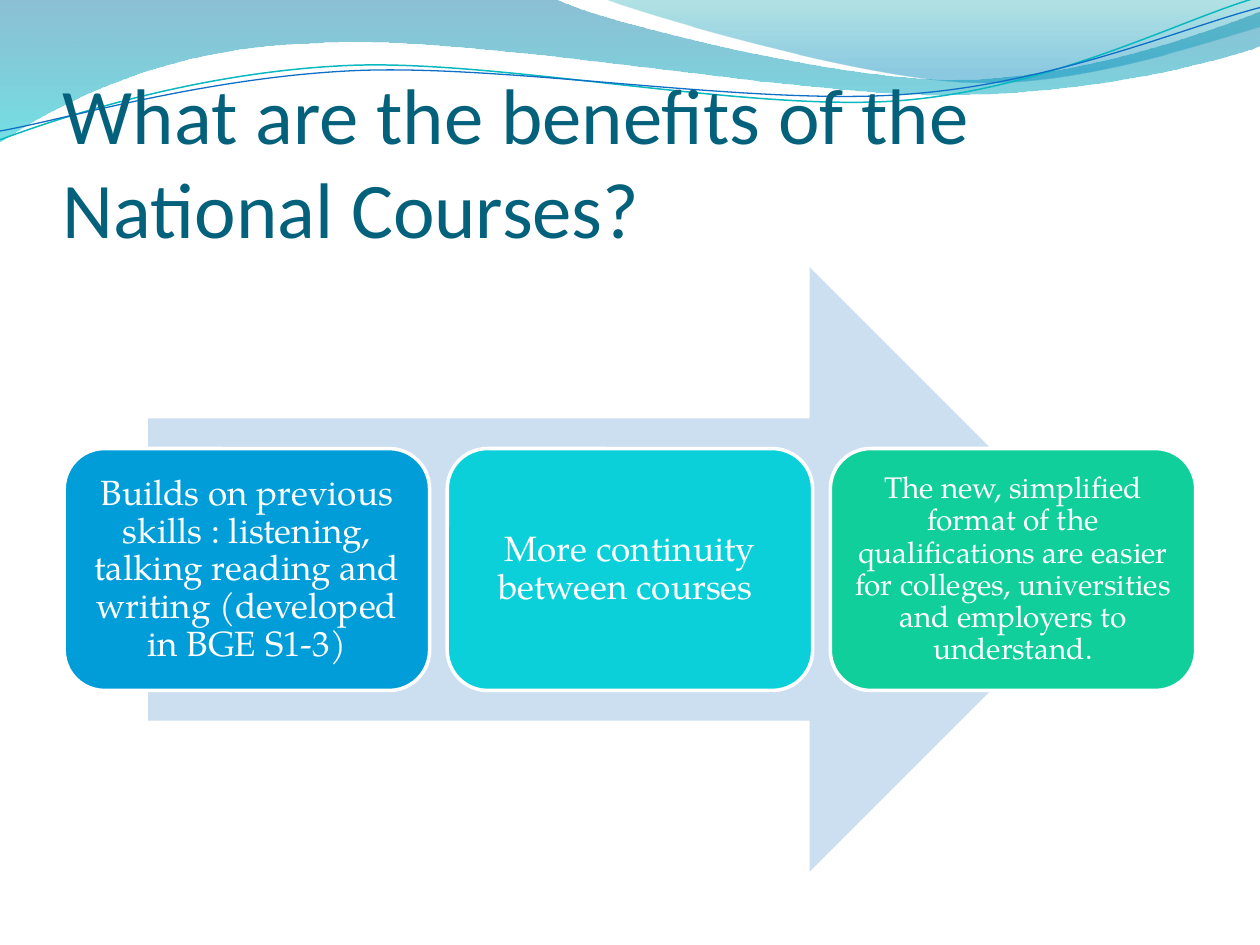
from math import cos, radians, sin

from lxml.etree import SubElement
from pptx import Presentation
from pptx.dml.color import RGBColor
from pptx.enum.shapes import MSO_SHAPE
from pptx.enum.text import MSO_ANCHOR, PP_ALIGN
from pptx.oxml.ns import qn
from pptx.util import Inches, Pt

WAVES = [
    ((-0.01, -0.01, 10.02, 1.14),
     [(0, 0), (4.4, -0.01), (4.76, 0.17, 6.64, 0.63, 7.58, 0.63),
      (8.53, 0.63, 9.58, 0.26, 10, 0.09), (10.01, 0.36),
      (9.83, 0.44, 8.7, 0.76, 7.46, 0.75), (6.22, 0.75, 3.82, 0.28, 2.57, 0.34),
      (1.29, 0.36, 0.46, 0.83, -0.01, 1.13), (0, 0)],
     [(0, "0074A1", 45), (100, "00C6CF", 55)]),
    ((4.79, -0.01, 5.21, 0.7),
     [(4.79, -0.01), (5.09, 0.11, 6.82, 0.62, 7.69, 0.65),
      (8.56, 0.69, 9.61, 0.32, 10, 0.21), (10, 0), (4.79, -0.01)],
     [(0, "00A1A9", 30), (80, "008BBF", 45)]),
]
RIBBON_TURN = -2.7
RIBBONS = [
    ((-0.02, 0.22, 10.02, 0.71),
     [(0, 1.11), (0.48, 0.93, 1.58, 0.57, 2.77, 0.52),
      (3.95, 0.47, 5.93, 0.89, 7.13, 0.8), (8.33, 0.71, 9.38, 0.15, 9.98, -0.02)],
     "0AB8BF", 0.85),
    ((-0.02, 0.3, 10.03, 0.58),
     [(0, 1.04), (0.47, 0.96, 1.64, 0.61, 2.83, 0.56),
      (4.03, 0.51, 5.97, 0.84, 7.17, 0.75), (8.36, 0.67, 9.41, 0.21, 10, 0.06)],
     "0F6FC6", 0.75),
]
BENEFITS = [
    ("Builds on previous skills : listening, talking reading and writing (developed in BGE S1-3)",
     20, 0.08, "009DD9"),
    ("More continuity between courses ", 20, 0.08, "0BD0D9"),
    ("The new, simplified format of the qualifications are easier for colleges, "
     "universities and employers to understand.", 17, 0.07, "10CF9B"),
]


def rgb(color):
    return RGBColor.from_string(color)


def turn_back(x, y, box, angle):
    left, top, width, height = box
    dx, dy = x - left - width / 2, y - top - height / 2
    a = radians(-angle)
    return (width / 2 + dx * cos(a) - dy * sin(a),
            height / 2 + dx * sin(a) + dy * cos(a))


def add_outline(s, box, nodes, close, angle=0):
    anchors = [(Inches(n[-2]), Inches(n[-1])) for n in nodes]
    builder = s.shapes.build_freeform(*anchors[0])
    builder.add_line_segments(anchors[1:], close=close)
    sp = builder.convert_to_shape()
    sp.shadow.inherit = False
    sp.left, sp.top, sp.width, sp.height = (Inches(v) for v in box)
    sp.rotation = angle
    outline = next(sp._element.iter(qn("a:path")))
    for child in list(outline):
        outline.remove(child)
    outline.set("w", str(sp.width))
    outline.set("h", str(sp.height))
    for i, node in enumerate(nodes):
        tag = "a:moveTo" if i == 0 else "a:lnTo" if len(node) == 2 else "a:cubicBezTo"
        step = SubElement(outline, qn(tag))
        for x, y in zip(node[::2], node[1::2]):
            px, py = turn_back(x, y, box, angle)
            SubElement(step, qn("a:pt"), x=str(Inches(px)), y=str(Inches(py)))
    if close:
        SubElement(outline, qn("a:close"))
    return sp


def fill_gradient(sp, stops):
    sp.fill.gradient()
    grad = sp._element.spPr.find(qn("a:gradFill"))
    for child in list(grad):
        grad.remove(child)
    stop_list = SubElement(grad, qn("a:gsLst"))
    for pos, color, opacity in stops:
        gs = SubElement(stop_list, qn("a:gs"), pos=str(pos * 1000))
        clr = SubElement(gs, qn("a:srgbClr"), val=color)
        SubElement(clr, qn("a:alpha"), val=str(opacity * 1000))
    SubElement(grad, qn("a:lin"), ang="5400000", scaled="0")


def add_header(s):
    for box, nodes, stops in WAVES:
        sp = add_outline(s, box, nodes, True)
        fill_gradient(sp, stops)
        sp.line.fill.background()
    for box, nodes, color, width in RIBBONS:
        sp = add_outline(s, box, nodes, False, RIBBON_TURN)
        sp.fill.background()
        sp.line.color.rgb = rgb(color)
        sp.line.width = Pt(width)


def add_text(s, box, anchor, margins, text, size, font, color):
    sp = s.shapes.add_textbox(*(Inches(v) for v in box))
    tf = sp.text_frame
    tf.word_wrap = True
    tf.vertical_anchor = anchor
    tf.margin_left, tf.margin_top, tf.margin_right, tf.margin_bottom = (
        Inches(v) for v in margins)
    p = tf.paragraphs[0]
    r = p.add_run()
    r.text = text
    r.font.size = Pt(size)
    r.font.name = font
    r.font.color.rgb = rgb(color)
    return p


def add_title(s, left, top, width, height):
    add_text(s, (left, top, width, height), MSO_ANCHOR.BOTTOM, (0, 0.05, 0, 0),
             "What are the benefits of the National Courses?", 45, "Calibri", "04617B")


def add_block(s, kind, left, top, width, height, color):
    sp = s.shapes.add_shape(kind, Inches(left), Inches(top), Inches(width), Inches(height))
    sp.shadow.inherit = False
    sp.fill.solid()
    sp.fill.fore_color.rgb = rgb(color)
    sp.line.fill.background()
    return sp


def add_card(s, left, top, width, height, text, size, inset, color):
    sp = add_block(s, MSO_SHAPE.ROUNDED_RECTANGLE, left, top, width, height, color)
    sp.line.color.rgb = rgb("FFFFFF")
    sp.line.width = Pt(2)
    pad = 0.095
    p = add_text(s, (left + pad, top + pad, width - 2 * pad, height - 2 * pad),
                 MSO_ANCHOR.MIDDLE, [inset] * 4, text, size, "TeX Gyre Pagella", "FFFFFF")
    p.alignment = PP_ALIGN.CENTER
    p.line_spacing = 0.9
    p.space_after = Pt(size * 0.35)


def add_process(s, left, top, width, height):
    arrow_width = width * 0.85
    add_block(s, MSO_SHAPE.RIGHT_ARROW, left + (width - arrow_width) / 2, top,
              arrow_width, height, "CCDFF1")
    card_width, card_height, pitch = 2.9, height * 0.4, 3.04
    for i, benefit in enumerate(BENEFITS):
        add_card(s, left + 0.01 + i * pitch, top + (height - card_height) / 2,
                 card_width, card_height, *benefit)


def main():
    prs = Presentation()
    prs.slide_width, prs.slide_height = Inches(10), Inches(7.5)
    s = prs.slides.add_slide(prs.slide_layouts[6])
    add_header(s)
    add_title(s, 0.5, 0.77, 9, 1.25)
    add_process(s, 0.5, 2.12, 9, 4.8)
    prs.save("out.pptx")


if __name__ == "__main__":
    main()
